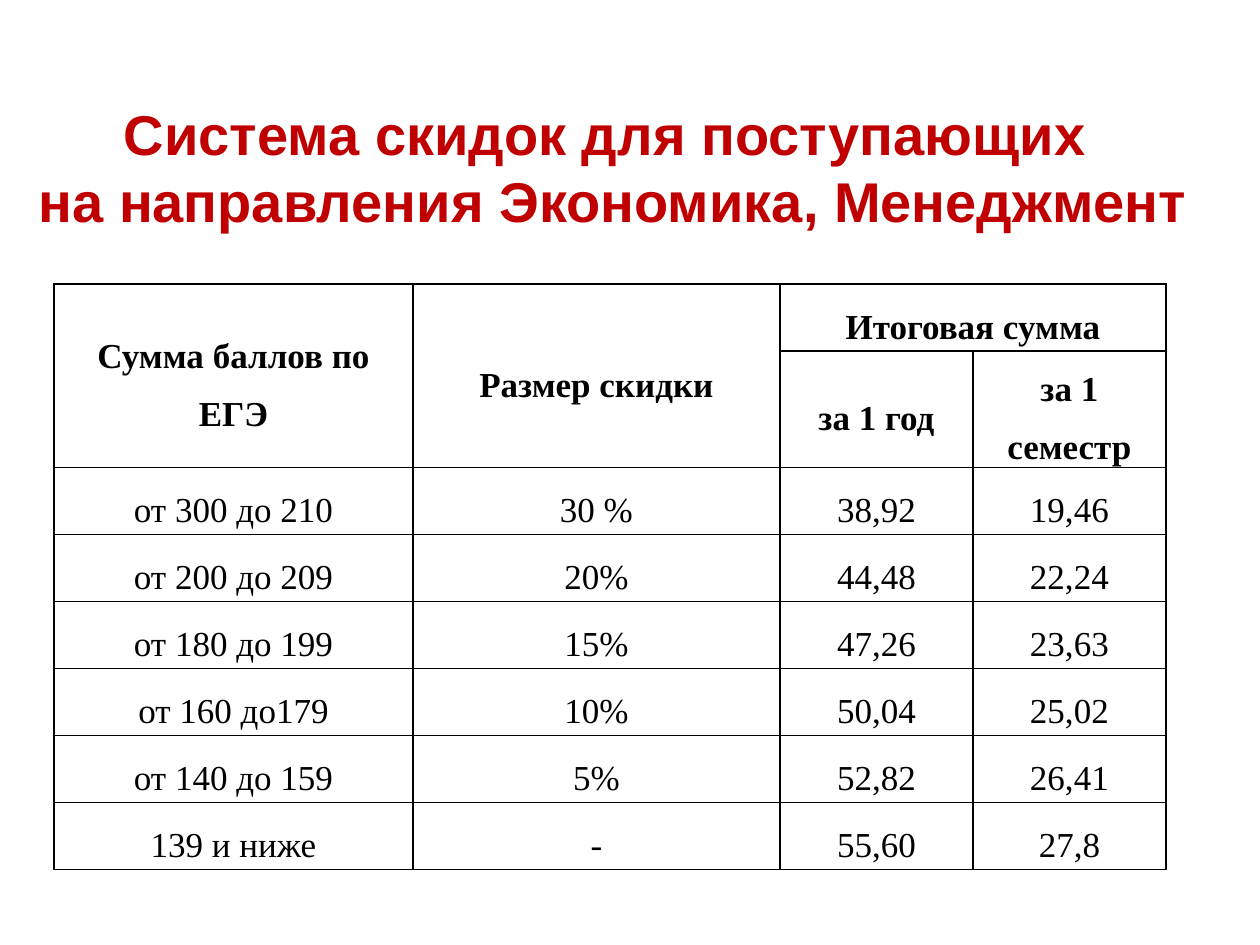
from pptx import Presentation
from pptx.dml.color import RGBColor
from pptx.enum.text import MSO_ANCHOR, PP_ALIGN
from pptx.oxml import parse_xml
from pptx.oxml.ns import nsdecls
from pptx.util import Emu, Pt

COLORS = {"title": "C00000", "text": "000000", "border": "000000"}
TITLE = ["Система скидок для поступающих ", "на направления Экономика, Менеджмент"]
HEADER_ROWS = 2
ROWS = [
    ["Сумма баллов по ЕГЭ", "Размер скидки", "Итоговая сумма", ""],
    ["", "", "за 1 год", "за 1 семестр"],
    ["от 300 до 210", "30 %", "38,92", "19,46"],
    ["от 200 до 209", "20%", "44,48", "22,24"],
    ["от 180 до 199", "15%", "47,26", "23,63"],
    ["от 160 до179", "10%", "50,04", "25,02"],
    ["от 140 до 159", "5%", "52,82", "26,41"],
    ["139 и ниже", "-", "55,60", "27,8"],
]
MERGES = [((0, 0), (1, 0)), ((0, 1), (1, 1)), ((0, 2), (0, 3))]
COL_WIDTHS = [359, 367, 193, 193]
ROW_HEIGHT = 67


def px(n):
    return Emu(round(n * 914400 / 126))


def set_font(p, name, size, color, bold):
    p.alignment = PP_ALIGN.CENTER
    p.font.name = name
    p.font.size = Pt(size)
    p.font.bold = bold
    p.font.color.rgb = RGBColor.from_string(COLORS[color])


def add_title(s, x, y, w, h):
    sp = s.shapes.title
    sp.left, sp.top, sp.width, sp.height = px(x), px(y), px(w), px(h)
    tf = sp.text_frame
    tf.word_wrap = True
    tf.vertical_anchor = MSO_ANCHOR.MIDDLE
    tf.text = "\n".join(TITLE)
    for p in tf.paragraphs:
        p.line_spacing = 1.0
        p.space_before = Pt(0)
        set_font(p, "Arial", 32, "title", True)


def add_borders(cell):
    tc_pr = cell._tc.get_or_add_tcPr()
    for i, side in enumerate(("lnL", "lnR", "lnT", "lnB")):
        tc_pr.insert(i, parse_xml(
            f'<a:{side} {nsdecls("a")} w="{Pt(1)}"><a:solidFill>'
            f'<a:srgbClr val="{COLORS["border"]}"/></a:solidFill></a:{side}>'))


def format_cell(cell, text, bold):
    cell.margin_left = cell.margin_right = px(9)
    cell.margin_top = cell.margin_bottom = 0
    cell.vertical_anchor = MSO_ANCHOR.MIDDLE
    cell.fill.background()
    add_borders(cell)
    cell.text = text
    p = cell.text_frame.paragraphs[0]
    p.line_spacing = 1.5
    set_font(p, "Times New Roman", 20, "text", bold)


def add_discounts(s, x, y):
    frame = s.shapes.add_table(len(ROWS), len(COL_WIDTHS), px(x), px(y),
                               px(sum(COL_WIDTHS)), px(ROW_HEIGHT * len(ROWS)))
    table = frame.table
    table.first_row = table.horz_banding = False
    for col, width in zip(table.columns, COL_WIDTHS):
        col.width = px(width)
    for r, texts in enumerate(ROWS):
        table.rows[r].height = px(ROW_HEIGHT)
        for c, text in enumerate(texts):
            format_cell(table.cell(r, c), text, r < HEADER_ROWS)
    for first, last in MERGES:
        table.cell(*first).merge(table.cell(*last))


def main():
    prs = Presentation()
    prs.slide_width, prs.slide_height = px(1260), px(945)
    s = prs.slides.add_slide(prs.slide_layouts[5])
    add_title(s, 0, 89, 1226, 156)
    add_discounts(s, 54, 284)
    prs.save("out.pptx")


if __name__ == "__main__":
    main()
